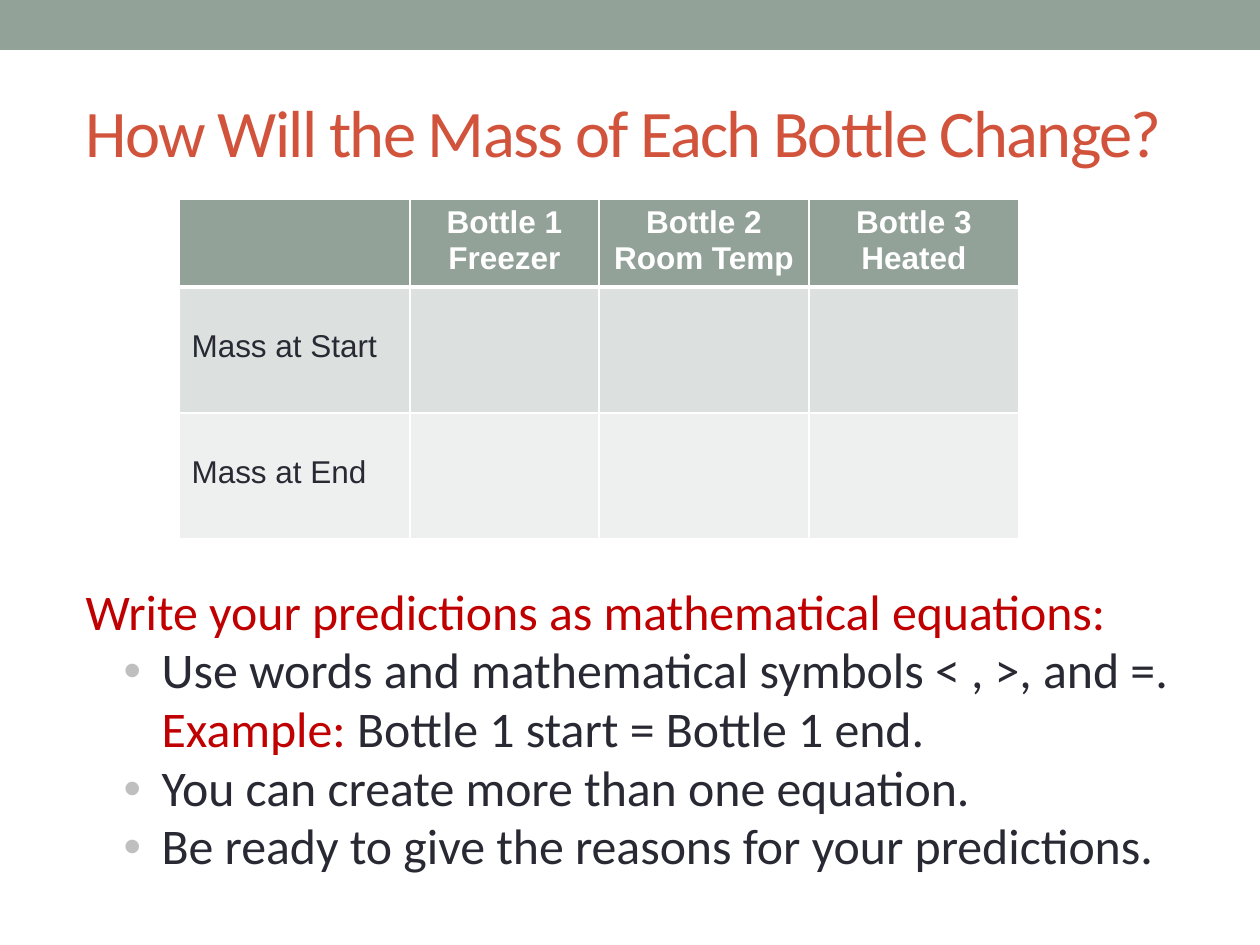
from lxml.etree import SubElement
from pptx import Presentation
from pptx.dml.color import RGBColor
from pptx.enum.shapes import MSO_SHAPE
from pptx.enum.text import MSO_ANCHOR, MSO_AUTO_SIZE, PP_ALIGN
from pptx.oxml.ns import qn
from pptx.util import Emu, Pt

SAGE = RGBColor(0x93, 0xA2, 0x99)
RUST = RGBColor(0xD2, 0x53, 0x3C)
RED = RGBColor(0xC0, 0x00, 0x00)
INK = RGBColor(0x29, 0x29, 0x34)
GRAY = RGBColor(0xBF, 0xBF, 0xBF)
WHITE = RGBColor(0xFF, 0xFF, 0xFF)
BANDS = RGBColor(0xDC, 0xE0, 0xDE), RGBColor(0xEE, 0xF0, 0xEF)

TITLE = dict(name="Calibri", size=Pt(38))
BODY = dict(name="Calibri", size=Pt(28.5))
HEAD = dict(name="Arial", size=Pt(18), bold=True)
CELL = dict(name="Arial", size=Pt(18), bold=False)


def px(n):
    return Emu(round(n * 914400 / 126))


def put(target, values):
    for key, value in values.items():
        setattr(target, key, value)


def paint(parent, color):
    fill = SubElement(parent, qn("a:solidFill"))
    SubElement(fill, qn("a:srgbClr"), val=str(color))


class Deck:
    """Holds the presentation and its current slide."""

    def __init__(self, wide, high):
        self.prs = Presentation()
        put(self.prs, dict(slide_width=px(wide), slide_height=px(high)))
        self.slide = self.prs.slides.add_slide(self.prs.slide_layouts[1])

    def bar(self, x, y, w, h):
        shape = self.slide.shapes.add_shape(
            MSO_SHAPE.RECTANGLE, px(x), px(y), px(w), px(h))
        shape.shadow.inherit = False
        shape.fill.solid()
        shape.fill.fore_color.rgb = SAGE
        shape.line.fill.background()

    def run(self, para, text, color, style):
        run = para.add_run()
        run.text = text
        put(run.font, style)
        run.font.color.rgb = color
        return run

    def holder(self, index, box, anchor):
        """Move a placeholder and return its text frame."""
        shape = self.slide.placeholders[index]
        put(shape, dict(zip(("left", "top", "width", "height"), map(px, box))))
        frame = shape.text_frame
        put(frame, dict(word_wrap=True, auto_size=MSO_AUTO_SIZE.NONE,
                        vertical_anchor=anchor))
        return frame

    def title(self, text, box):
        para = self.holder(0, box, MSO_ANCHOR.MIDDLE).paragraphs[0]
        para.alignment = PP_ALIGN.LEFT
        run = self.run(para, text, RUST, TITLE)
        run.font._element.set("spc", "-100")

    def bullet(self, para, shown):
        props = para._p.get_or_add_pPr()
        props.set("marL", str(px(76) if shown else 0))
        props.set("indent", str(px(-38) if shown else 0))
        if shown:
            paint_in = SubElement(props, qn("a:buClr"))
            SubElement(paint_in, qn("a:srgbClr"), val=str(GRAY))
            SubElement(props, qn("a:buFont"), typeface="Arial")
            SubElement(props, qn("a:buChar"), char="•")
        else:
            SubElement(props, qn("a:buNone"))

    def body(self, items, box):
        """Each item is a list of (text, color); the first has no bullet."""
        frame = self.holder(1, box, MSO_ANCHOR.TOP)
        for i, parts in enumerate(items):
            para = frame.add_paragraph() if i else frame.paragraphs[0]
            self.bullet(para, i > 0)
            put(para, dict(space_before=Pt(0), line_spacing=0.98))
            for text, color in parts:
                self.run(para, text, color, BODY)

    def edges(self, cell, row):
        props = cell._tc.get_or_add_tcPr()
        for side in "LRTB":
            thick = (row, side) in ((0, "B"), (1, "T"))
            line = SubElement(props, qn(f"a:ln{side}"),
                              w=str(Pt(3 if thick else 1)))
            paint(line, WHITE)

    def table(self, rows, cols, highs, x, y):
        grid = self.slide.shapes.add_table(
            len(rows), len(cols), px(x), px(y),
            px(sum(cols)), px(sum(highs))).table
        for col, wide in zip(grid.columns, cols):
            col.width = px(wide)
        for r, (row, high) in enumerate(zip(rows, highs)):
            grid.rows[r].height = px(high)
            for c, text in enumerate(row):
                self.cell(grid.cell(r, c), text, r)

    def cell(self, cell, text, row):
        self.edges(cell, row)
        cell.fill.solid()
        cell.fill.fore_color.rgb = BANDS[row - 1] if row else SAGE
        if row:
            cell.margin_top = px(42)
        if not text:
            return
        frame = cell.text_frame
        for i, line in enumerate(text.split("\n")):
            para = frame.add_paragraph() if i else frame.paragraphs[0]
            para.alignment = PP_ALIGN.LEFT if row else PP_ALIGN.CENTER
            self.run(para, line, INK if row else WHITE, CELL if row else HEAD)


def main():
    deck = Deck(1260, 945)
    deck.bar(0, 0, 1260, 50)
    deck.title("How Will the Mass of Each Bottle Change?", (73, 63, 1166, 136))
    deck.body([
        [("Write your predictions as mathematical equations:", RED)],
        [("Use words and mathematical symbols < , >, and =. ", INK),
         ("Example: ", RED), ("Bottle 1 start = Bottle 1 end.", INK)],
        [("You can create more than one equation.", INK)],
        [("Be ready to give the reasons for your predictions.", INK)],
    ], (73, 577, 1166, 315))
    deck.table([
        ["", "Bottle 1\nFreezer", "Bottle 2\nRoom Temp", "Bottle 3\nHeated"],
        ["Mass at Start", "", "", ""],
        ["Mass at End", "", "", ""],
    ], (231, 189, 210, 210), (88, 126, 126), 179, 199)
    deck.prs.save("out.pptx")


if __name__ == "__main__":
    main()
